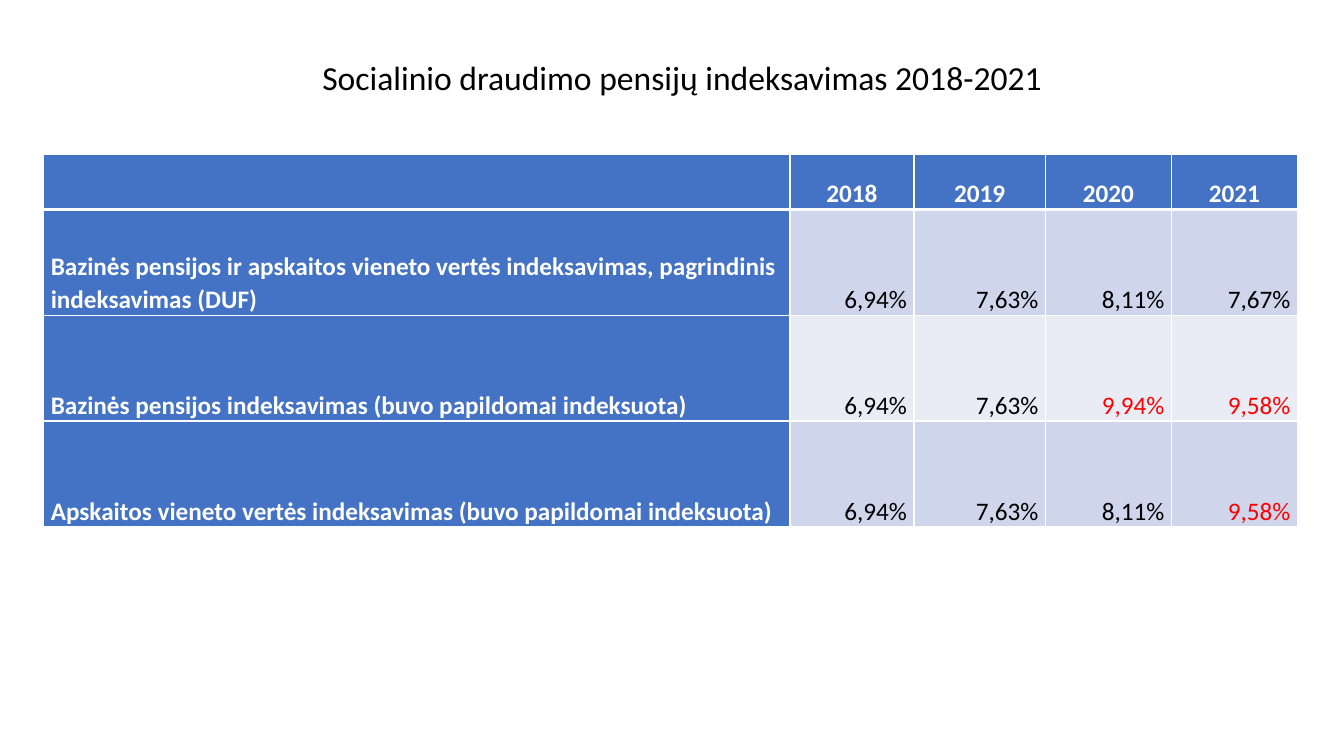
from dataclasses import dataclass

import lxml.etree
import pptx
import pptx.dml.color
import pptx.enum.text
import pptx.oxml
import pptx.oxml.ns
import pptx.slide
import pptx.table
import pptx.util

Pt = pptx.util.Pt
ALIGN = pptx.enum.text.PP_ALIGN
ANCHOR = pptx.enum.text.MSO_ANCHOR

COLORS = {
    "header": "4472C4",
    "odd": "CFD5EA",
    "even": "E9EBF5",
    "white": "FFFFFF",
    "text": "000000",
    "extra": "FF0000",
}
FONT = "Calibri"
YEARS = ("2018", "2019", "2020", "2021")
COLUMN_WIDTHS = (533, 88.6, 93.9, 90, 90)
HEADER_HEIGHT, ROW_HEIGHT = 39.6, 75.6


@dataclass(frozen=True)
class Indexation:
    label: str
    rates: tuple[str, ...]
    extra_years: tuple[str, ...] = ()


INDEXATIONS = (
    Indexation(
        "Bazinės pensijos ir apskaitos vieneto vertės indeksavimas, "
        "pagrindinis indeksavimas (DUF)",
        ("6,94%", "7,63%", "8,11%", "7,67%"),
    ),
    Indexation(
        "Bazinės pensijos indeksavimas (buvo papildomai indeksuota)",
        ("6,94%", "7,63%", "9,94%", "9,58%"),
        ("2020", "2021"),
    ),
    Indexation(
        "Apskaitos vieneto vertės indeksavimas (buvo papildomai indeksuota)",
        ("6,94%", "7,63%", "8,11%", "9,58%"),
        ("2021",),
    ),
)


def rgb(name: str) -> pptx.dml.color.RGBColor:
    return pptx.dml.color.RGBColor.from_string(COLORS[name])


def set_borders(cell: pptx.table._Cell, top: float, bottom: float) -> None:
    """Draw white borders; the sides are always 1 pt wide."""
    tc_pr = cell._tc.get_or_add_tcPr()
    qn = pptx.oxml.ns.qn
    widths = {"a:lnL": 1, "a:lnR": 1, "a:lnT": top, "a:lnB": bottom}
    for i, (tag, width) in enumerate(widths.items()):
        ln = pptx.oxml.parse_xml(
            f'<{tag} {pptx.oxml.ns.nsdecls("a")} w="{Pt(width)}"/>'
        )
        fill = lxml.etree.SubElement(ln, qn("a:solidFill"))
        lxml.etree.SubElement(fill, qn("a:srgbClr"), val=COLORS["white"])
        tc_pr.insert(i, ln)


def fill_cell(
    cell: pptx.table._Cell,
    text: str,
    fill: str,
    color: str = "white",
    align: ALIGN = ALIGN.LEFT,
    bold: bool = True,
    before: float = 0,
    after: float = 8,
) -> None:
    cell.fill.solid()
    cell.fill.fore_color.rgb = rgb(fill)
    cell.vertical_anchor = ANCHOR.BOTTOM
    cell.margin_left = cell.margin_right = Pt(5)
    cell.margin_top = cell.margin_bottom = Pt(0)
    p = cell.text_frame.paragraphs[0]
    p.text = text
    p.alignment = align
    p.line_spacing = 1.07
    p.space_before, p.space_after = Pt(before), Pt(after)
    p.font.name, p.font.size, p.font.bold = FONT, Pt(18), bold
    p.font.color.rgb = rgb(color)


def add_title(s: pptx.slide.Slide) -> None:
    sp = s.shapes.title
    sp.left, sp.top, sp.width, sp.height = Pt(53.3), Pt(36.7), Pt(873.4), Pt(36)
    tf = sp.text_frame
    tf.word_wrap = True
    tf.auto_size = pptx.enum.text.MSO_AUTO_SIZE.SHAPE_TO_FIT_TEXT
    tf.vertical_anchor = ANCHOR.TOP
    p = tf.paragraphs[0]
    p.text = "Socialinio draudimo pensijų indeksavimas 2018-2021 "
    p.alignment = ALIGN.CENTER
    p.font.name, p.font.size = FONT, Pt(24)
    p.font.color.rgb = rgb("text")


def add_indexation_table(s: pptx.slide.Slide) -> None:
    heights = (HEADER_HEIGHT,) + (ROW_HEIGHT,) * len(INDEXATIONS)
    table = s.shapes.add_table(
        len(heights), len(COLUMN_WIDTHS),
        Pt(31.3), Pt(110), Pt(sum(COLUMN_WIDTHS)), Pt(sum(heights)),
    ).table
    table.first_col = True
    for column, width in zip(table.columns, COLUMN_WIDTHS):
        column.width = Pt(width)
    for row, height in zip(table.rows, heights):
        row.height = Pt(height)

    for c, heading in enumerate(("", *YEARS)):
        fill_cell(table.cell(0, c), heading, "header", align=ALIGN.CENTER)
        set_borders(table.cell(0, c), top=1, bottom=3)

    for r, indexation in enumerate(INDEXATIONS, start=1):
        fill_cell(table.cell(r, 0), indexation.label, "header")
        for c, (year, rate) in enumerate(zip(YEARS, indexation.rates), start=1):
            fill_cell(
                table.cell(r, c), rate,
                fill="odd" if r % 2 else "even",
                color="extra" if year in indexation.extra_years else "text",
                align=ALIGN.RIGHT, bold=False, before=6, after=6,
            )
        for cell in table.rows[r].cells:
            set_borders(cell, top=3 if r == 1 else 1, bottom=1)


def main() -> None:
    prs = pptx.Presentation()
    prs.slide_width, prs.slide_height = Pt(960), Pt(540)
    s = prs.slides.add_slide(prs.slide_layouts.get_by_name("Title Only"))
    add_indexation_table(s)
    add_title(s)
    prs.save("out.pptx")


if __name__ == "__main__":
    main()
